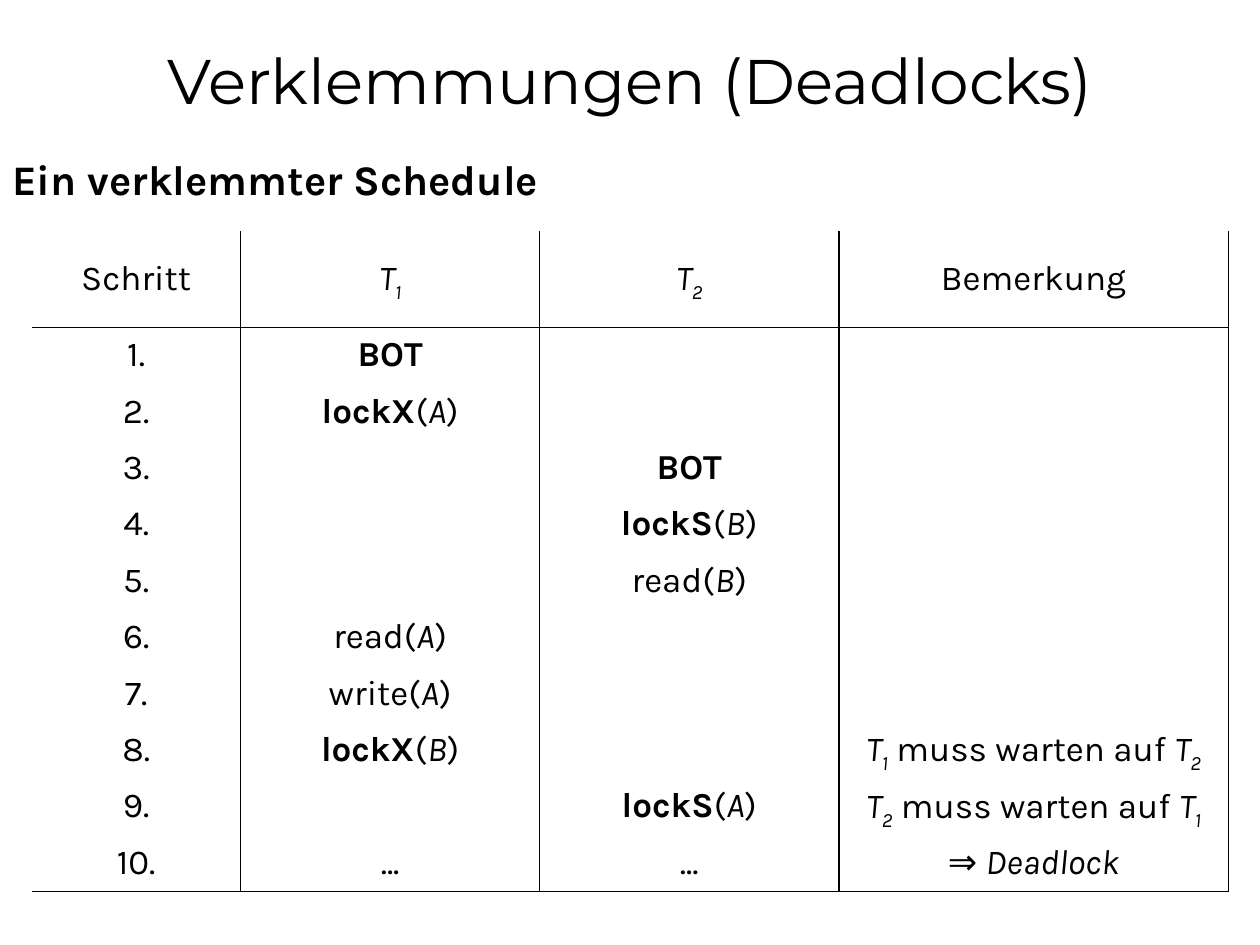
from lxml.etree import SubElement
from pptx import Presentation
from pptx.dml.color import RGBColor
from pptx.enum.text import MSO_ANCHOR, PP_ALIGN
from pptx.oxml.ns import qn
from pptx.util import Cm, Pt

BLACK = RGBColor(0, 0, 0)
NO_STYLE_NO_GRID = "{2D5ABB26-0587-4C30-8999-92F81FD0307C}"

# Content: a cell is a list of (text, style); styles: b bold, i italic, s subscript
TITLE = "Verklemmungen (Deadlocks)"
HEADING = "Ein verklemmter Schedule"
T1 = [("T", "i"), ("1", "is")]
T2 = [("T", "i"), ("2", "is")]
BOT = [("BOT", "b")]
DOTS = [("...", "")]
WAITS = [(" muss warten auf ", "")]


def lock(mode, item):
    return [("lock" + mode, "b"), ("(", ""), (item, "i"), (")", "")]


def access(action, item):
    return [(action + "(", ""), (item, "i"), (")", "")]


HEADER = [[("Schritt", "")], T1, T2, [("Bemerkung", "")]]
STEPS = [  # T1, T2, remark
    (BOT, [], []),
    (lock("X", "A"), [], []),
    ([], BOT, []),
    ([], lock("S", "B"), []),
    ([], access("read", "B"), []),
    (access("read", "A"), [], []),
    (access("write", "A"), [], []),
    (lock("X", "B"), [], T1 + WAITS + T2),
    ([], lock("S", "A"), T2 + WAITS + T1),
    (DOTS, DOTS, [("⇒ ", ""), ("Deadlock", "i")]),
]
COLUMN_WIDTHS = [Cm(4.21), Cm(6.03), Cm(6.03), Cm(7.85)]
HEADER_HEIGHT, STEP_HEIGHT = Cm(1.94), Cm(1.137)


def add_span(para, text, size, font_name="Karla", style=""):
    span = para.add_run()
    span.text = text
    font = span.font
    font.name, font.size = font_name, Pt(size)
    font.bold, font.italic = "b" in style, "i" in style
    font.color.rgb = BLACK
    if "s" in style:
        font._element.set("baseline", "-25000")


def set_borders(cell, sides):
    properties = cell._tc.get_or_add_tcPr()
    for position, side in enumerate("LRTB"):
        line = SubElement(properties, qn("a:ln" + side), w=str(Pt(1)))
        properties.insert(position, line)
        if side in sides:
            fill = SubElement(line, qn("a:solidFill"))
            SubElement(fill, qn("a:srgbClr"), val=str(BLACK))
        else:
            SubElement(line, qn("a:noFill"))


deck = Presentation()
deck.slide_width, deck.slide_height = Cm(25.4), Cm(19.05)
page = deck.slides.add_slide(deck.slide_layouts[5])

# Title
title = page.shapes.title
title.left, title.top, title.width, title.height = Cm(0), Cm(0), Cm(25.4), Cm(3.18)
title.text_frame.vertical_anchor = MSO_ANCHOR.MIDDLE
add_span(title.text_frame.paragraphs[0], TITLE, 36, "Montserrat")

# Heading
box = page.shapes.add_textbox(Cm(0), Cm(2.97), Cm(25.4), Cm(1.27))
box.text_frame.word_wrap = True
add_span(box.text_frame.paragraphs[0], HEADING, 24, style="b")

# Schedule table
rows = [HEADER] + [
    [[(f"{number}.", "")], *step] for number, step in enumerate(STEPS, start=1)
]
frame = page.shapes.add_table(
    len(rows), len(HEADER), Cm(0.64), Cm(4.66),
    sum(COLUMN_WIDTHS), HEADER_HEIGHT + STEP_HEIGHT * len(STEPS),
)
table = frame.table
table.first_row = table.horz_banding = False
table._tbl.tblPr.find(qn("a:tableStyleId")).text = NO_STYLE_NO_GRID
for column, width in zip(table.columns, COLUMN_WIDTHS):
    column.width = width

for row_index, row in enumerate(rows):
    table.rows[row_index].height = STEP_HEIGHT if row_index else HEADER_HEIGHT
    for column_index, spans in enumerate(row):
        cell = table.cell(row_index, column_index)
        cell.fill.background()
        cell.vertical_anchor = MSO_ANCHOR.MIDDLE
        cell.margin_top = cell.margin_bottom = Cm(0.12)
        para = cell.text_frame.paragraphs[0]
        para.alignment = PP_ALIGN.CENTER
        para.line_spacing, para.space_before = 0.9, Pt(4)
        for text, style in spans:
            add_span(para, text, 20, style=style)
        # Rules right of every column, below the header and below the last step
        sides = "LR" if column_index else "R"
        if row_index == 1:
            sides += "T"
        if row_index in (0, len(rows) - 1):
            sides += "B"
        set_borders(cell, sides)

deck.save("out.pptx")
